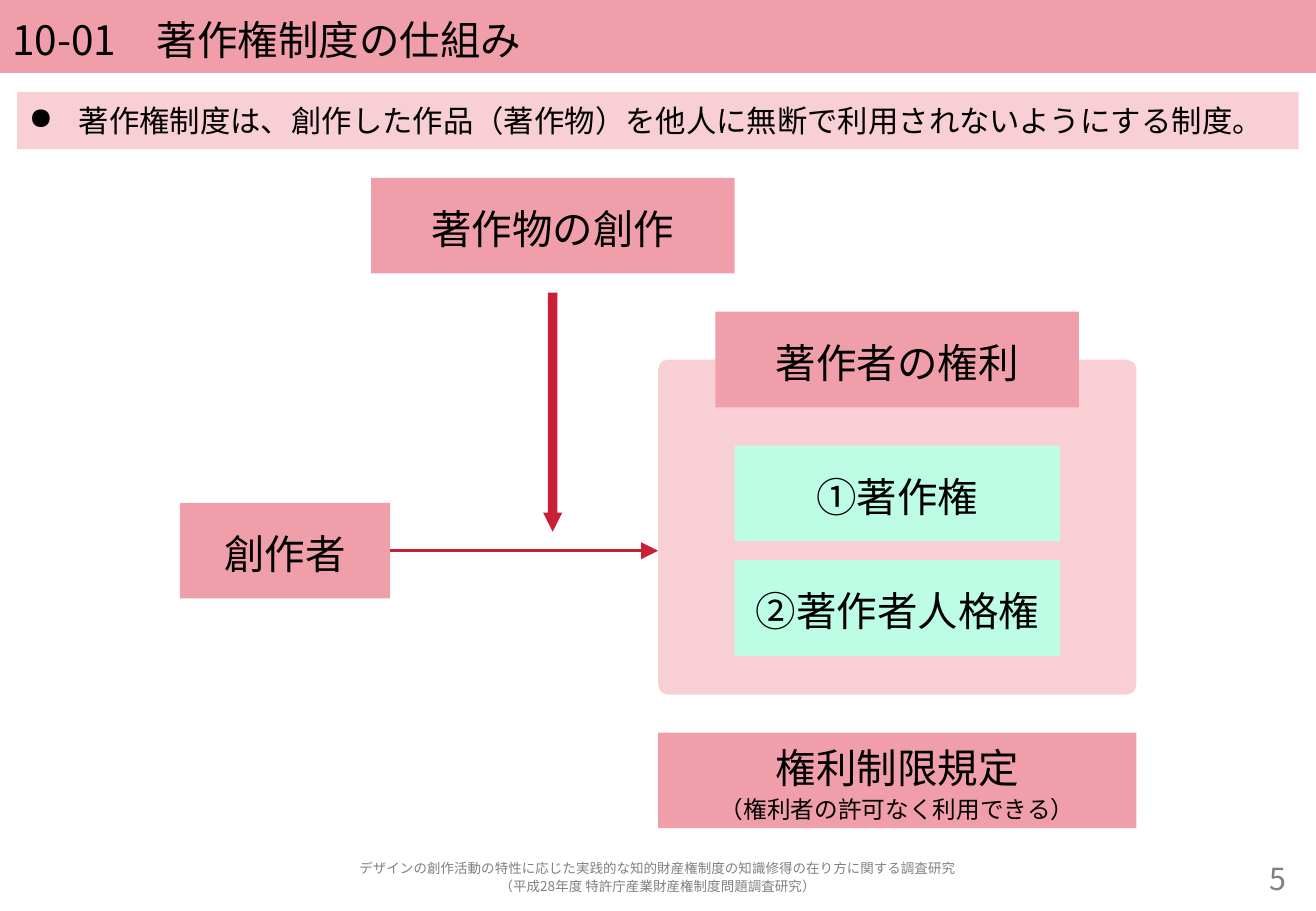
from lxml import etree
from pptx import Presentation
from pptx.dml.color import RGBColor
from pptx.enum.shapes import MSO_CONNECTOR, MSO_SHAPE as SHAPE
from pptx.enum.text import MSO_ANCHOR as ANCHOR, MSO_AUTO_SIZE, PP_ALIGN as ALIGN
from pptx.oxml.ns import qn
from pptx.util import Pt

FONT = "Noto Sans CJK JP"
PINK, PALE, MINT, RED = "F09FAA", "F8CFD5", "BDFDE5", "C91F37"
BLACK, GRAY = "000000", "808080"
BOX_H = 56.7


def paint(fmt, color):
    """Apply a solid colour to a fill."""
    fmt.solid()
    fmt.fore_color.rgb = RGBColor.from_string(color)


def write(sp, text, sizes, color=BLACK, align=ALIGN.CENTER, anchor=ANCHOR.MIDDLE):
    """Set the text, one size per paragraph."""
    tf = sp.text_frame
    tf.text = text
    tf.word_wrap = True
    tf.auto_size = MSO_AUTO_SIZE.NONE
    tf.vertical_anchor = anchor
    for p, size in zip(tf.paragraphs, sizes):
        p.alignment = align
        p.line_spacing = 1.1
        for r in p.runs:
            r.font.size = Pt(size)
            r.font.name = FONT
            paint(r.font.fill, color)
            ea = etree.SubElement(r.font._element, qn("a:ea"))
            ea.set("typeface", FONT)


prs = Presentation()
prs.slide_width, prs.slide_height = Pt(780), Pt(540)
s = prs.slides.add_slide(prs.slide_layouts[5])

# Title band
title = s.shapes.title
title.left, title.top, title.width, title.height = Pt(0), Pt(0), Pt(780), Pt(43.2)
paint(title.fill, PINK)
write(title, "10-01\u3000著作権制度の仕組み".replace("\u3000", "　"), [24], align=ALIGN.LEFT)

# Bulleted summary
summary = s.shapes.add_textbox(Pt(10.1), Pt(54.7), Pt(759.6), Pt(33.8))
paint(summary.fill, PALE)
write(summary, "著作権制度は、創作した作品（著作物）を他人に無断で利用されないようにする制度。",
      [18], align=ALIGN.LEFT, anchor=ANCHOR.TOP)
pPr = summary.text_frame.paragraphs[0]._p.get_or_add_pPr()
pPr.set("marL", str(Pt(29.5)))
pPr.set("indent", str(Pt(-29.5)))
etree.SubElement(pPr, qn("a:buChar")).set("char", "●")

# Boxes and the down arrow, back to front
boxes = {}
for name, kind, x, y, w, h, color, sizes in [
    ("", SHAPE.ROUNDED_RECTANGLE, 390.1, 213.2, 283.5, 198.6, PALE, []),
    ("創作者", SHAPE.RECTANGLE, 106.6, 298.1, 124.6, BOX_H, PINK, [24]),
    ("①著作権", SHAPE.RECTANGLE, 435.5, 264.2, 192.8, BOX_H, MINT, [24]),
    ("②著作者人格権", SHAPE.RECTANGLE, 435.5, 332.1, 192.8, BOX_H, MINT, [24]),
    ("著作者の権利", SHAPE.RECTANGLE, 424.1, 184.8, 215.5, BOX_H, PINK, [24]),
    ("著作物の創作", SHAPE.RECTANGLE, 220, 105.4, 215.5, BOX_H, PINK, [24]),
    ("権利制限規定\n（権利者の許可なく利用できる）", SHAPE.RECTANGLE,
     390.1, 434.3, 283.5, BOX_H, PINK, [24, 14]),
    ("矢印", SHAPE.DOWN_ARROW, 321.9, 173.5, 11.4, 141.7, RED, []),
]:
    sp = s.shapes.add_shape(kind, Pt(x), Pt(y), Pt(w), Pt(h))
    sp.shadow.inherit = False
    paint(sp.fill, color)
    sp.line.fill.background()
    if sizes:
        write(sp, name, sizes)
    boxes[name] = sp
boxes[""].adjustments[0] = 0.03
boxes["矢印"].adjustments[1] = 1

# Arrow from the creator to the rights panel
creator = boxes["創作者"]
mid_y = creator.top + creator.height // 2
arrow = s.shapes.add_connector(MSO_CONNECTOR.STRAIGHT, creator.left + creator.width, mid_y,
                               boxes[""].left, mid_y)
arrow.begin_connect(creator, 3)
paint(arrow.line.fill, RED)
arrow.line.width = Pt(2)
tail = etree.SubElement(arrow.line._get_or_add_ln(), qn("a:tailEnd"))
for key, value in [("type", "triangle"), ("w", "lg"), ("len", "lg")]:
    tail.set(key, value)
etree.SubElement(arrow._element.spPr, qn("a:effectLst"))

# Footer and page number
for text, x, w, sizes, align in [
    ("デザインの創作活動の特性に応じた実践的な知的財産権制度の知識修得の在り方に関する調査研究\n"
     "（平成28年度 特許庁産業財産権制度問題調査研究）", 10.1, 759.6, [8, 8], ALIGN.CENTER),
    ("5", 673.2, 96.5, [18], ALIGN.RIGHT),
]:
    sp = s.shapes.add_textbox(Pt(x), Pt(508.3), Pt(w), Pt(22.3))
    write(sp, text, sizes, GRAY, align)

prs.save("out.pptx")
